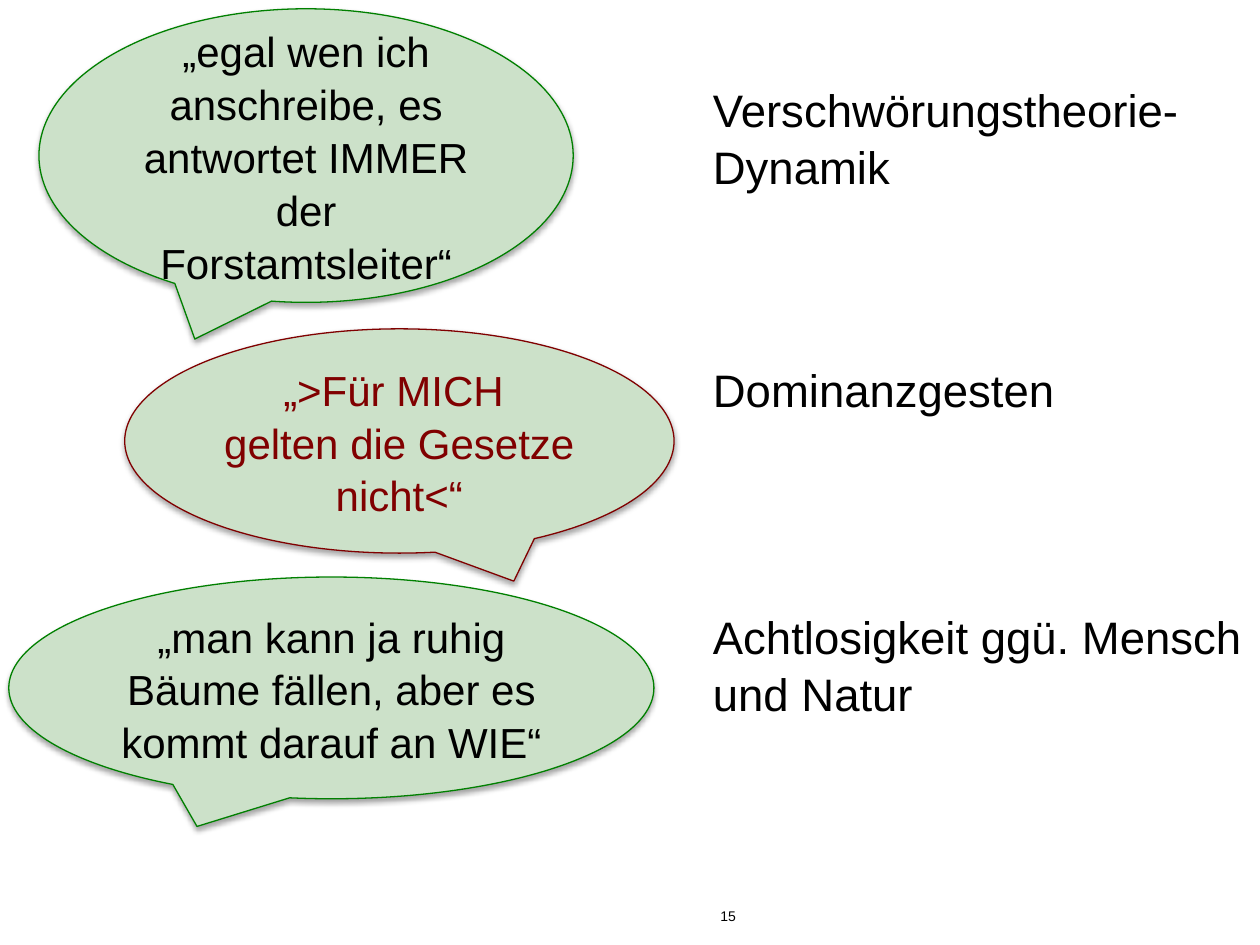
from dataclasses import dataclass

from lxml import etree
from pptx import Presentation
from pptx import util as u
from pptx.dml.color import RGBColor
from pptx.enum import shapes, text
from pptx.oxml import ns

BLACK = RGBColor(0x00, 0x00, 0x00)
GREEN = RGBColor(0x00, 0x80, 0x00)
DARK_RED = RGBColor(0x80, 0x00, 0x00)
PALE_GREEN = RGBColor(0xCC, 0xE1, 0xC9)
FONT = "Arial"
LABEL_LEFT = 5.56


@dataclass(frozen=True)
class Quote:
    wording: str
    left: float
    top: float
    width: float
    height: float
    outline: RGBColor = GREEN
    ink: RGBColor = BLACK
    mirrored: bool = False


@dataclass(frozen=True)
class Label:
    wording: str
    top: float
    width: float
    height: float


QUOTES = (
    Quote("„egal wen ich anschreibe, es antwortet IMMER der Forstamtsleiter“",
          0.31, 0.07, 4.24, 2.33),
    Quote("„>Für MICH \ngelten die Gesetze nicht<“",
          0.99, 2.61, 4.36, 1.78, DARK_RED, DARK_RED, True),
    Quote("„man kann ja ruhig Bäume fällen, aber es kommt darauf an WIE“",
          0.07, 4.58, 5.12, 1.76),
)
LABELS = (
    Label("Verschwörungstheorie-Dynamik", 0.58, 4.14, 0.98),
    Label("Dominanzgesten", 2.8, 4.14, 0.54),
    Label("Achtlosigkeit ggü. Mensch und Natur", 4.76, 4.44, 0.98),
)


def write(frame, wording: str, size: float, ink: RGBColor,
          align: text.PP_ALIGN, spacing: float = 1.05) -> None:
    frame.word_wrap = True
    frame.text = wording
    for paragraph in frame.paragraphs:
        paragraph.alignment = align
        paragraph.line_spacing = spacing
        for run in paragraph.runs:
            run.font.name = FONT
            run.font.size = u.Pt(size)
            run.font.color.rgb = ink


def cast_shadow(bubble) -> None:
    bubble.shadow.inherit = False
    effects = bubble.element.spPr.find(ns.qn("a:effectLst"))
    shadow = etree.SubElement(
        effects, ns.qn("a:outerShdw"), blurRad=str(u.Pt(3.1)),
        dist=str(u.Pt(1.8)), dir="5400000", rotWithShape="0")
    tint = etree.SubElement(shadow, ns.qn("a:srgbClr"), val=str(BLACK))
    etree.SubElement(tint, ns.qn("a:alpha"), val="35000")


def draw_quote(slide, quote: Quote) -> None:
    bubble = slide.shapes.add_shape(
        shapes.MSO_SHAPE.OVAL_CALLOUT, u.Inches(quote.left), u.Inches(quote.top),
        u.Inches(quote.width), u.Inches(quote.height))
    bubble.fill.solid()
    bubble.fill.fore_color.rgb = PALE_GREEN
    bubble.line.color.rgb = quote.outline
    bubble.line.width = u.Pt(0.75)
    cast_shadow(bubble)
    if quote.mirrored:
        bubble.element.spPr.find(ns.qn("a:xfrm")).set("flipH", "1")
    bubble.text_frame.vertical_anchor = text.MSO_ANCHOR.MIDDLE
    write(bubble.text_frame, quote.wording, 24, quote.ink, text.PP_ALIGN.CENTER)


def draw_label(slide, label: Label) -> None:
    box = slide.shapes.add_textbox(
        u.Inches(LABEL_LEFT), u.Inches(label.top),
        u.Inches(label.width), u.Inches(label.height))
    write(box.text_frame, label.wording, 26, BLACK, text.PP_ALIGN.LEFT)
    box.text_frame.auto_size = text.MSO_AUTO_SIZE.SHAPE_TO_FIT_TEXT


def draw_page_number(slide, number: str) -> None:
    box = slide.shapes.add_textbox(
        u.Inches(4.87), u.Inches(7.15), u.Inches(1.07), u.Inches(0.35))
    write(box.text_frame, number, 8, BLACK, text.PP_ALIGN.RIGHT, 1.0)


def main() -> None:
    deck = Presentation()
    deck.slide_width = u.Inches(10)
    deck.slide_height = u.Inches(7.5)
    slide = deck.slides.add_slide(deck.slide_layouts[6])
    draw_page_number(slide, "15")
    for quote in QUOTES:
        draw_quote(slide, quote)
    for label in LABELS:
        draw_label(slide, label)
    deck.save("out.pptx")


if __name__ == "__main__":
    main()
